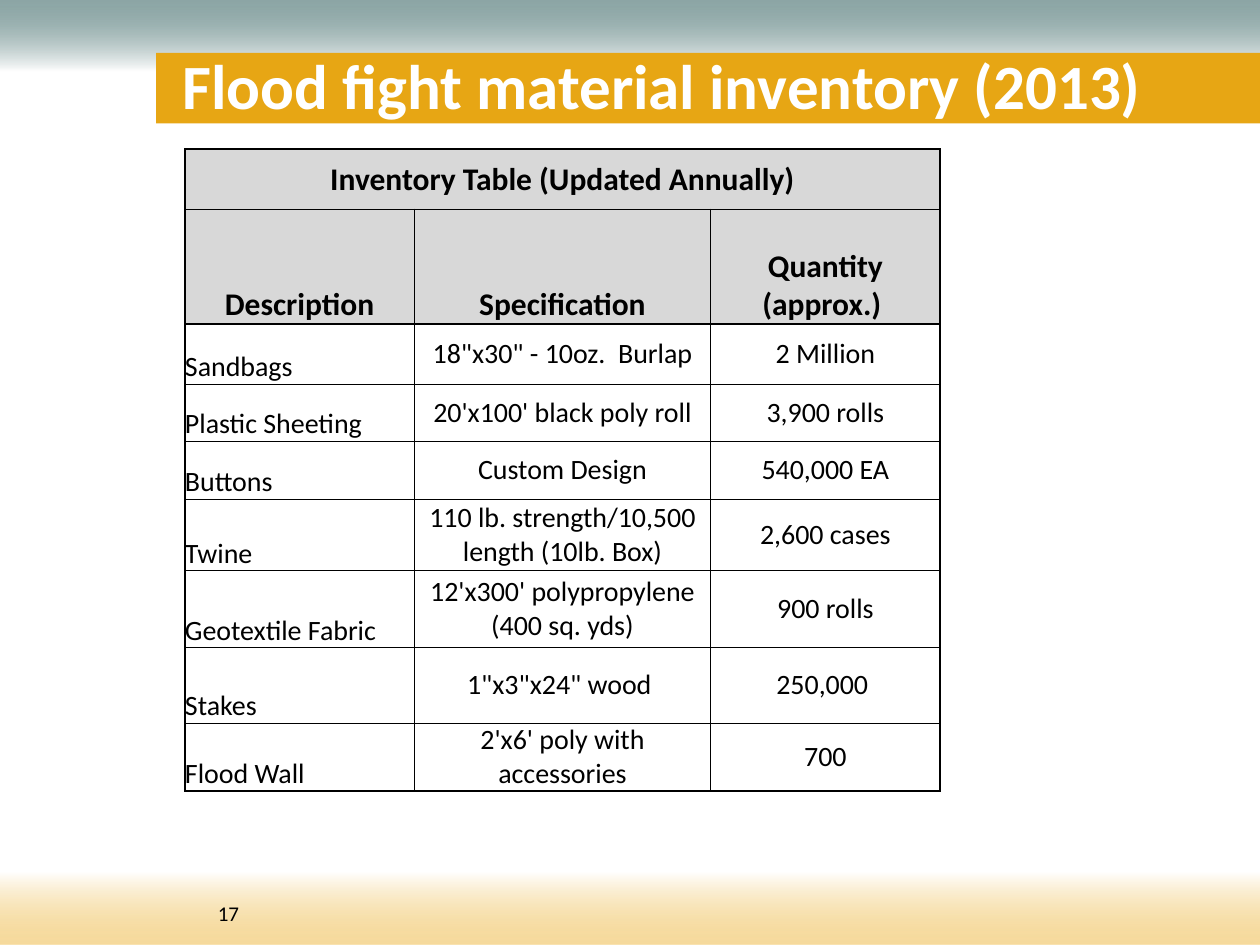
"""Build the flood fight material inventory slide."""
from dataclasses import dataclass

from lxml.etree import SubElement
from pptx import Presentation
from pptx.dml.color import RGBColor
from pptx.enum.shapes import MSO_SHAPE
from pptx.enum.text import MSO_ANCHOR, PP_ALIGN
from pptx.oxml import parse_xml
from pptx.oxml.ns import nsdecls, qn
from pptx.util import Pt


@dataclass(frozen=True)
class Theme:
    font: str = "Calibri"
    ink: str = "000000"
    white: str = "FFFFFF"
    teal: str = "215352"
    gold: str = "E7A614"
    sand: str = "EEB840"
    header: str = "D8D8D8"
    title_size: int = 36
    header_size: int = 18
    body_size: int = 16
    number_size: int = 12


theme = Theme()


def write(frame, text, size, color, bold=False, align=PP_ALIGN.LEFT):
    paragraph = frame.paragraphs[0]
    paragraph.alignment = align
    run = paragraph.add_run()
    run.text = text
    run.font.name = theme.font
    run.font.size = Pt(size)
    run.font.bold = bold
    run.font.color.rgb = RGBColor.from_string(color)


def add_band(left, top, width, height):
    band = slide.shapes.add_shape(MSO_SHAPE.RECTANGLE, Pt(left), Pt(top), Pt(width), Pt(height))
    band.shadow.inherit = False
    band.line.fill.background()
    return band


prs = Presentation()
prs.slide_width, prs.slide_height = Pt(720), Pt(540)
slide = prs.slides.add_slide(prs.slide_layouts[6])

for top, height, color, angle in [(0, 78.5, theme.teal, 270), (460, 80, theme.sand, 90)]:
    fade = add_band(0, top, 720, height)
    fade.fill.gradient()
    fade.fill.gradient_angle = angle
    start, end = fade.fill.gradient_stops
    start.color.rgb = RGBColor.from_string(color)
    start.position = 0
    end.color.rgb = RGBColor.from_string(theme.white)
    end.position = 0.52
    start_color = next(fade.element.iter(qn("a:srgbClr")))
    SubElement(start_color, qn("a:alpha"), val="51000")

title_bar = add_band(89.3, 30.2, 630.7, 40.3)
title_bar.fill.solid()
title_bar.fill.fore_color.rgb = RGBColor.from_string(theme.gold)

page_number = slide.shapes.add_textbox(Pt(117.4), Pt(511.2), Pt(167.8), Pt(28.8)).text_frame
page_number.word_wrap = True
write(page_number, "17", theme.number_size, theme.ink)

title = slide.shapes.add_textbox(Pt(97.2), Pt(15.8), Pt(576.7), Pt(64.8)).text_frame
title.word_wrap = True
title.vertical_anchor = MSO_ANCHOR.MIDDLE
write(title, "Flood fight material inventory (2013)", theme.title_size, theme.white, bold=True)

inventory_rows = [
    ("Inventory Table (Updated Annually)", "", ""),
    ("Description", "Specification", "Quantity (approx.) "),
    ("Sandbags", "18\"x30\" - 10oz.  Burlap", "2 Million"),
    ("Plastic Sheeting", "20'x100' black poly roll", "3,900 rolls"),
    ("Buttons", "Custom Design", "540,000 EA"),
    ("Twine", "110 lb. strength/10,500 length (10lb. Box)", "2,600 cases"),
    ("Geotextile Fabric", "12'x300' polypropylene (400 sq. yds)", "900 rolls"),
    ("Stakes", "1\"x3\"x24\" wood ", "250,000 "),
    ("Flood Wall", "2'x6' poly with accessories", "700"),
]
column_widths = [131, 169.5, 131]
row_heights = [34.5, 65.5, 34.5, 32.5, 33, 41, 44, 43, 39]
last_row, last_column = len(row_heights) - 1, len(column_widths) - 1

inventory = slide.shapes.add_table(
    len(row_heights), len(column_widths), Pt(105.7), Pt(85.2),
    Pt(sum(column_widths)), Pt(sum(row_heights))).table
for column, width in zip(inventory.columns, column_widths):
    column.width = Pt(width)
for row, height in zip(inventory.rows, row_heights):
    row.height = Pt(height)
inventory.cell(0, 0).merge(inventory.cell(0, last_column))

for r, texts in enumerate(inventory_rows):
    is_header = r <= 1
    for c, text in enumerate(texts):
        cell = inventory.cell(r, c)
        cell.margin_left = cell.margin_top = cell.margin_right = cell.margin_bottom = 0
        at_bottom = r == 1 or (r > 1 and c == 0)
        cell.vertical_anchor = MSO_ANCHOR.BOTTOM if at_bottom else MSO_ANCHOR.MIDDLE
        if is_header:
            cell.fill.solid()
            cell.fill.fore_color.rgb = RGBColor.from_string(theme.header)
        else:
            cell.fill.background()
        if text:
            write(cell.text_frame, text, theme.header_size if is_header else theme.body_size,
                  theme.ink, is_header,
                  PP_ALIGN.CENTER if is_header or c else PP_ALIGN.LEFT)
        heavy_sides = {"L": r == 0 or c == 0, "R": r == 0 or c == last_column,
                       "T": r <= 2, "B": is_header or r == last_row}
        cell_properties = cell._tc.get_or_add_tcPr()
        for position, (side, heavy) in enumerate(heavy_sides.items()):
            border = parse_xml(
                f'<a:ln{side} {nsdecls("a")} w="{Pt(1 if heavy else 0.5)}"><a:solidFill>'
                f'<a:srgbClr val="{theme.ink}"/></a:solidFill></a:ln{side}>')
            cell_properties.insert(position, border)

prs.save("out.pptx")
